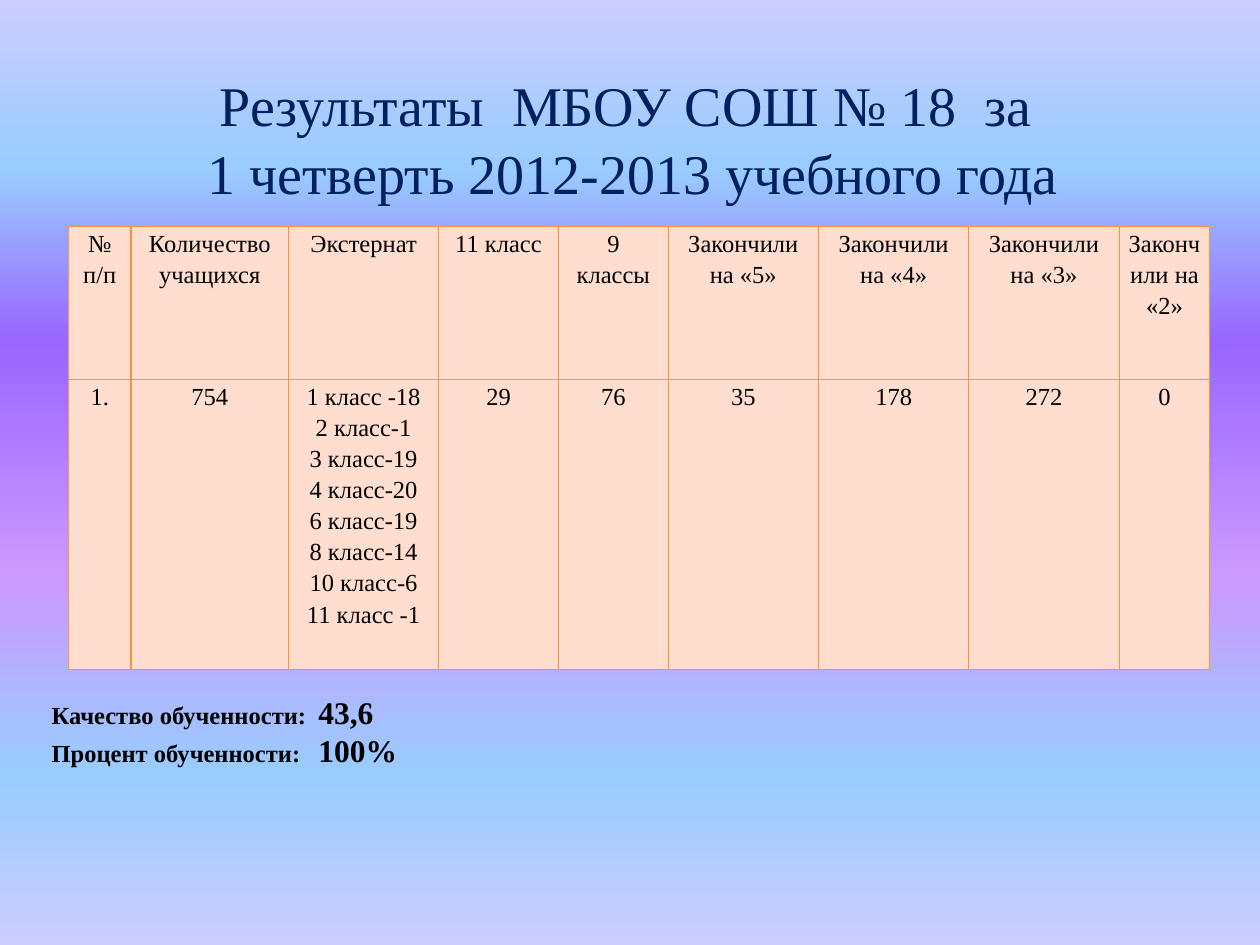
from pptx import Presentation
from pptx.dml.color import RGBColor
from pptx.enum.text import MSO_ANCHOR as Anchor, PP_ALIGN as Align
from pptx.oxml.ns import qn
from pptx.util import Cm, Pt
from lxml.etree import SubElement

FONT = "Times New Roman"
NAVY = RGBColor(0x00, 0x20, 0x60)
BLACK = RGBColor(0x00, 0x00, 0x00)
PEACH = RGBColor(0xFF, 0xDE, 0xD0)
ORANGE = RGBColor(0xF6, 0x92, 0x40)
LAVENDER = RGBColor(0xCC, 0xCC, 0xFF)
SKY = RGBColor(0x99, 0xCC, 0xFF)
VIOLET = RGBColor(0x99, 0x66, 0xFF)
LILAC = RGBColor(0xCC, 0x99, 0xFF)

BACKGROUND_STOPS = [(0, LAVENDER), (18, SKY), (36, VIOLET),
                    (61, LILAC), (82, SKY), (100, LAVENDER)]
TITLE = "Результаты  МБОУ СОШ № 18  за\v 1 четверть 2012-2013 учебного года"
EXTERNAL_STUDENTS = ["1 класс -18", "2 класс-1", "3 класс-19", "4 класс-20",
                     "6 класс-19", "8 класс-14", "10 класс-6", "11 класс -1"]
COLUMNS = [
    ("№ п/п", "1.", 1.26),
    ("Количество учащихся", "754", 3.18),
    ("Экстернат", "\n".join(EXTERNAL_STUDENTS), 3.02),
    ("11 класс", "29", 2.42),
    ("9 классы", "76", 2.21),
    ("Закончили на «5»", "35", 3.03),
    ("Закончили на «4»", "178", 3.03),
    ("Закончили на «3»", "272", 3.03),
    ("Закончили на «2»", "0", 1.83),
]
ROW_HEIGHTS = [3.08, 5.84]
SUMMARY = [("Качество обученности:", "43,6"), ("Процент обученности:", "100%")]


def style_font(font, size, color, bold=False):
    font.name = FONT
    font.size = Pt(size)
    font.bold = bold
    font.color.rgb = color


def paint_background(slide):
    fill = slide.background.fill
    fill.gradient()
    fill.gradient_angle = 270
    stop_list = next(slide.element.iter(qn("a:gsLst")))
    for stop in list(stop_list):
        stop_list.remove(stop)
    for percent, color in BACKGROUND_STOPS:
        stop = SubElement(stop_list, qn("a:gs"), pos=str(percent * 1000))
        SubElement(stop, qn("a:srgbClr"), val=str(color))


def add_text_frame(slide, left, top, width, height):
    frame = slide.shapes.add_textbox(Cm(left), Cm(top), Cm(width), Cm(height)).text_frame
    frame.word_wrap = True
    frame.vertical_anchor = Anchor.MIDDLE
    return frame


def add_title(slide):
    paragraph = add_text_frame(slide, 1.19, 1.4, 22.86, 2.77).paragraphs[0]
    paragraph.text = TITLE
    paragraph.alignment = Align.CENTER
    style_font(paragraph.font, 32, NAVY)


def add_borders(cell):
    properties = cell._tc.get_or_add_tcPr()
    for side in ("lnL", "lnR", "lnT", "lnB"):
        line = SubElement(properties, qn(f"a:{side}"), w=str(Pt(0.75)))
        line_fill = SubElement(line, qn("a:solidFill"))
        SubElement(line_fill, qn("a:srgbClr"), val=str(ORANGE))


def fill_cell(cell, text):
    add_borders(cell)
    cell.fill.solid()
    cell.fill.fore_color.rgb = PEACH
    cell.margin_left = cell.margin_right = Cm(0.18)
    cell.margin_top = cell.margin_bottom = 0
    cell.text = text
    for paragraph in cell.text_frame.paragraphs:
        paragraph.alignment = Align.CENTER
        paragraph.line_spacing = 1.15
        style_font(paragraph.font, 14, BLACK)


def add_results_table(slide):
    total_width = sum(width for _, _, width in COLUMNS)
    table = slide.shapes.add_table(len(ROW_HEIGHTS), len(COLUMNS), Cm(1.38), Cm(4.57),
                                   Cm(total_width), Cm(sum(ROW_HEIGHTS))).table
    table.first_row = table.horz_banding = False
    for row, height in zip(table.rows, ROW_HEIGHTS):
        row.height = Cm(height)
    for index, (heading, value, width) in enumerate(COLUMNS):
        table.columns[index].width = Cm(width)
        fill_cell(table.cell(0, index), heading)
        fill_cell(table.cell(1, index), value)


def add_summary(slide):
    frame = add_text_frame(slide, 0.79, 14.1, 23.5, 1.27)
    for index, (label, value) in enumerate(SUMMARY):
        paragraph = frame.add_paragraph() if index else frame.paragraphs[0]
        for text, size in ((label + "\t", 14), (value, 18)):
            run = paragraph.add_run()
            run.text = text
            style_font(run.font, size, BLACK, bold=True)
        tabs = SubElement(paragraph._p.get_or_add_pPr(), qn("a:tabLst"))
        SubElement(tabs, qn("a:tab"), pos=str(Cm(5.38)), algn="l")


def main():
    presentation = Presentation()
    presentation.slide_width = Cm(25.4)
    presentation.slide_height = Cm(19.05)
    slide = presentation.slides.add_slide(presentation.slide_layouts[6])
    paint_background(slide)
    add_title(slide)
    add_results_table(slide)
    add_summary(slide)
    presentation.save("out.pptx")


if __name__ == "__main__":
    main()
